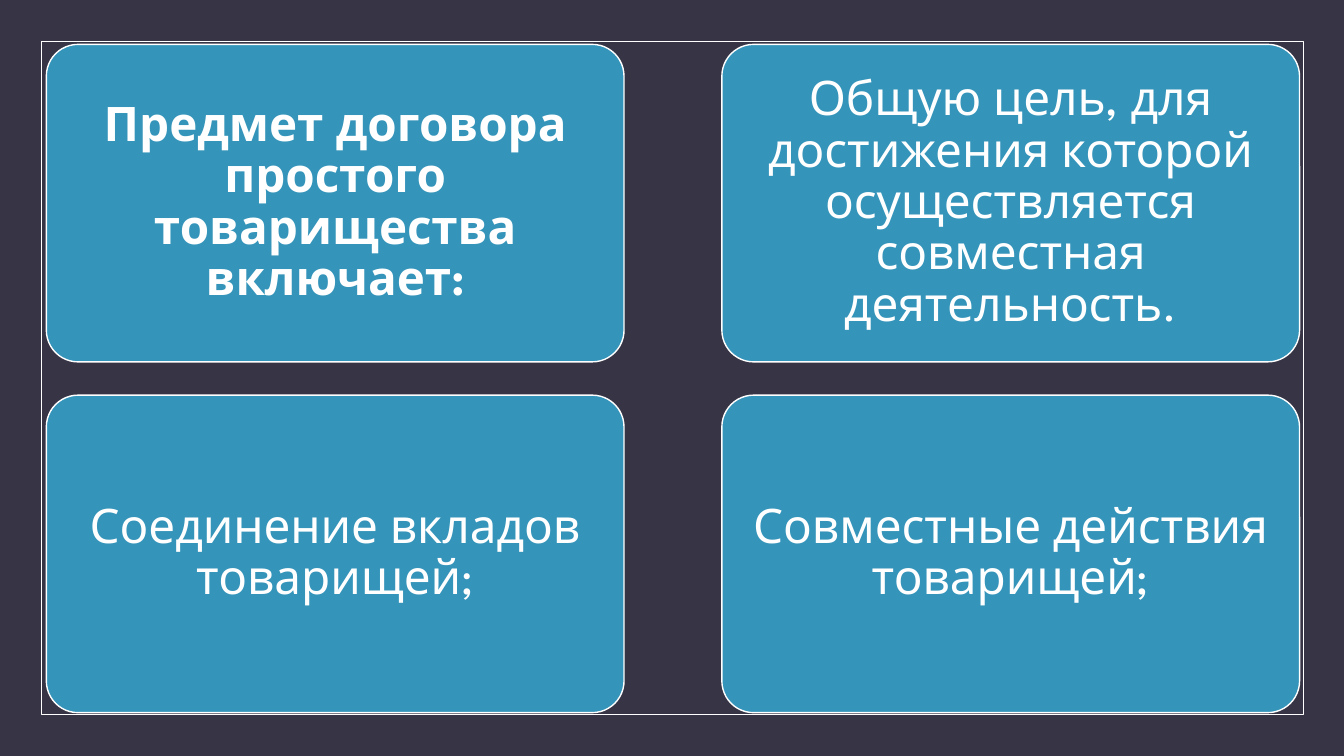
from dataclasses import dataclass

from pptx import Presentation
from pptx import util as u
from pptx.dml.color import RGBColor
from pptx.enum import shapes, text


@dataclass(frozen=True)
class Theme:
    background: str = "373545"
    card: str = "3494BA"
    light: str = "FFFFFF"
    font: str = "League Spartan"
    body_size: float = 34
    frame_line: float = 0.5
    card_line: float = 1


THEME = Theme()
SLIDE_WIDTH, SLIDE_HEIGHT = 13.33, 7.5
FRAME_BOX = (0.41, 0.41, 12.52, 6.68)
GRID_BOX = (0.46, 0.44, 12.43, 6.63)
COLUMN_GAP, ROW_GAP = 0.97, 0.33
CARD_ROWS = [
    ["Предмет договора простого товарищества включает:",
     "Общую цель, для достижения которой осуществляется совместная деятельность."],
    ["Соединение вкладов товарищей;", "Совместные действия товарищей;"],
]


def color(value):
    return RGBColor.from_string(value)


def add_box(slide, kind, box, line_width, fill=None):
    shape = slide.shapes.add_shape(kind, *(u.Inches(length) for length in box))
    shape.shadow.inherit = False
    if fill:
        shape.fill.solid()
        shape.fill.fore_color.rgb = color(fill)
    else:
        shape.fill.background()
    shape.line.color.rgb = color(THEME.light)
    shape.line.width = u.Pt(line_width)
    return shape


def write_text(shape, words, size=THEME.body_size, bold=False, inset=0.14):
    frame = shape.text_frame
    frame.word_wrap = True
    frame.vertical_anchor = text.MSO_ANCHOR.MIDDLE
    frame.margin_left = frame.margin_right = u.Inches(inset)
    frame.margin_top = frame.margin_bottom = u.Inches(inset)
    paragraph = frame.paragraphs[0]
    paragraph.alignment = text.PP_ALIGN.CENTER
    paragraph.line_spacing = 0.9
    run = paragraph.add_run()
    run.text = words
    run.font.name = THEME.font
    run.font.size = u.Pt(size)
    run.font.bold = bold
    run.font.color.rgb = color(THEME.light)


def add_card_grid(slide, box, rows):
    left, top, width, height = box
    columns = len(rows[0])
    card_width = (width - COLUMN_GAP * (columns - 1)) / columns
    card_height = (height - ROW_GAP * (len(rows) - 1)) / len(rows)
    for row, cards in enumerate(rows):
        for column, words in enumerate(cards):
            card_box = (left + column * (card_width + COLUMN_GAP),
                        top + row * (card_height + ROW_GAP),
                        card_width, card_height)
            card = add_box(slide, shapes.MSO_SHAPE.ROUNDED_RECTANGLE, card_box,
                           THEME.card_line, THEME.card)
            card.adjustments[0] = 0.1
            # The first card is the heading
            write_text(card, words, bold=row == column == 0)


def main():
    presentation = Presentation()
    presentation.slide_width = u.Inches(SLIDE_WIDTH)
    presentation.slide_height = u.Inches(SLIDE_HEIGHT)
    slide = presentation.slides.add_slide(presentation.slide_layouts[6])

    # Background and thin frame
    slide.background.fill.solid()
    slide.background.fill.fore_color.rgb = color(THEME.background)
    add_box(slide, shapes.MSO_SHAPE.RECTANGLE, FRAME_BOX, THEME.frame_line)

    # Heading and its three parts
    add_card_grid(slide, GRID_BOX, CARD_ROWS)
    presentation.save("out.pptx")


if __name__ == "__main__":
    main()
